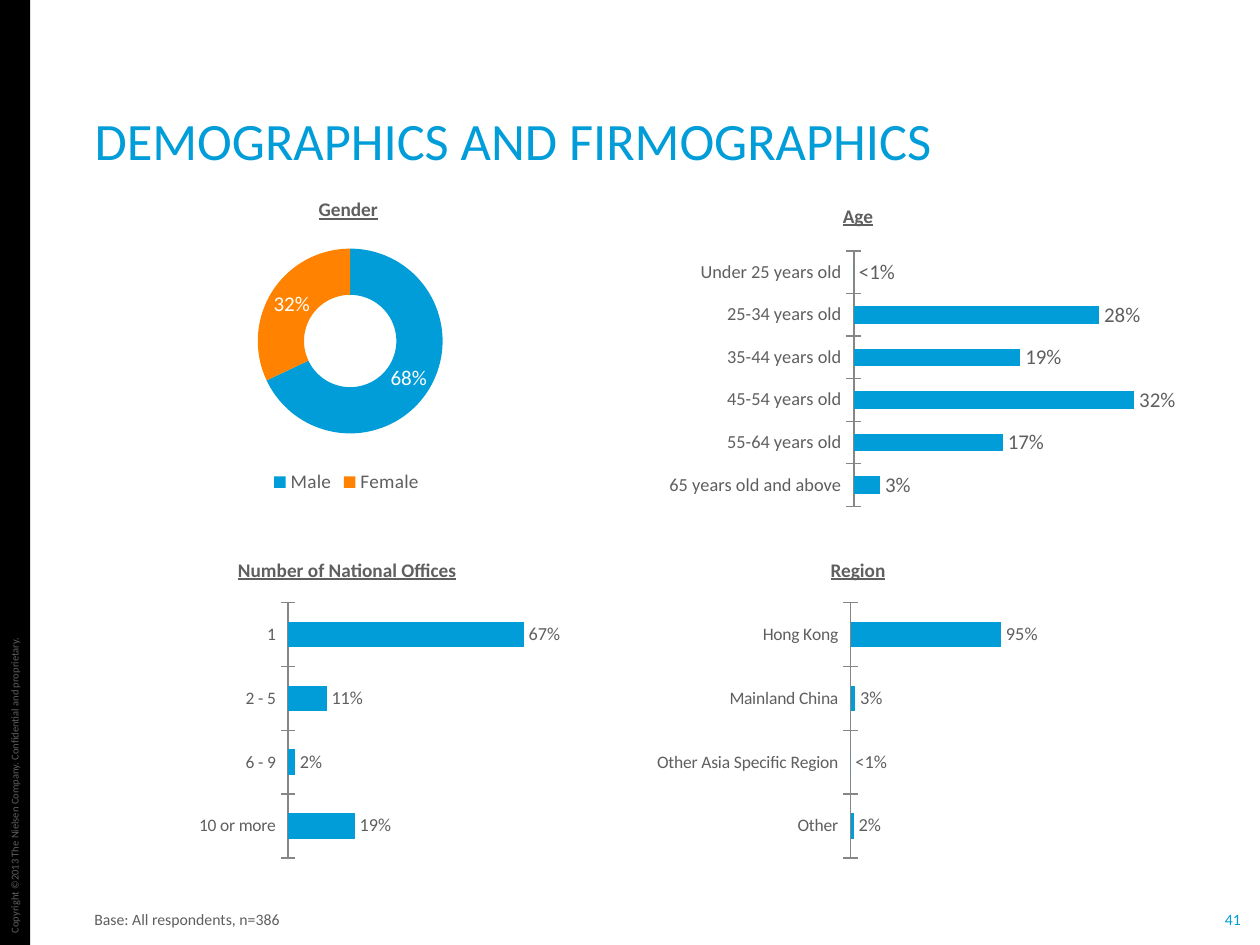
from lxml import etree
from pptx import Presentation
from pptx import util as u
from pptx.chart.data import CategoryChartData
from pptx.dml.color import RGBColor
from pptx.enum import chart as charts, shapes, text
from pptx.oxml.ns import qn

BLUE = RGBColor(0x00, 0x9D, 0xD9)
ORANGE = RGBColor(0xFF, 0x83, 0x00)
GRAY = RGBColor(0x5F, 0x5F, 0x5F)
AXIS = RGBColor(0x86, 0x86, 0x86)
BLACK = RGBColor(0, 0, 0)
WHITE = RGBColor(0xFF, 0xFF, 0xFF)
FONT = "Calibri"


class SlideBuilder:
    def __init__(self, slide):
        self.slide = slide

    def font(self, font, size, color=GRAY, bold=False, underline=False):
        font.name = FONT
        font.size = u.Pt(size)
        font.color.rgb = color
        font.bold = bold
        font.underline = underline

    def place(self, shape, box):
        shape.left, shape.top, shape.width, shape.height = map(u.Inches, box)

    def fill_text(self, frame, words, size, color, align, anchor, margins, wrap, **style):
        frame.word_wrap = wrap
        frame.auto_size = text.MSO_AUTO_SIZE.NONE
        frame.vertical_anchor = anchor
        frame.margin_left = frame.margin_right = u.Inches(margins[0])
        frame.margin_top = frame.margin_bottom = u.Inches(margins[1])
        paragraph = frame.paragraphs[0]
        paragraph.alignment = align
        run = paragraph.add_run()
        run.text = words
        self.font(run.font, size, color, **style)

    def title(self, box, words):
        title = self.slide.shapes.title
        self.place(title, box)
        self.fill_text(title.text_frame, words, 30, BLUE, text.PP_ALIGN.LEFT,
                       text.MSO_ANCHOR.BOTTOM, (0.1, 0), True)

    def text(self, box, words, size, color=GRAY, align=text.PP_ALIGN.LEFT,
             anchor=text.MSO_ANCHOR.TOP, margins=(0.1, 0.05), wrap=False,
             rotation=0, **style):
        shape = self.slide.shapes.add_textbox(*map(u.Inches, box))
        shape.rotation = rotation
        self.fill_text(shape.text_frame, words, size, color, align, anchor,
                       margins, wrap, **style)

    def heading(self, box, words, **options):
        self.text(box, words, 11, bold=True, underline=True, **options)

    def band(self, box, color):
        shape = self.slide.shapes.add_shape(
            shapes.MSO_SHAPE.RECTANGLE, *map(u.Inches, box))
        shape.shadow.inherit = False
        shape.fill.solid()
        shape.fill.fore_color.rgb = color
        shape.line.fill.background()

    def chart(self, kind, box, categories, values, plot_box, number_format):
        data = CategoryChartData(number_format=number_format)
        data.categories = categories
        data.add_series("Series 1", values)
        chart = self.slide.shapes.add_chart(kind, *map(u.Inches, box), data).chart
        chart.has_title = False
        chart.has_legend = False
        self.font(chart.font, 18)
        self.plot_layout(chart, plot_box)
        return chart

    def plot_layout(self, chart, plot_box):
        area = chart.plots[0]._element.getparent()
        for old in area.findall(qn("c:layout")):
            area.remove(old)
        layout = etree.Element(qn("c:layout"))
        manual = etree.SubElement(layout, qn("c:manualLayout"))
        settings = [("layoutTarget", "inner"), ("xMode", "edge"), ("yMode", "edge")]
        for name, value in settings + list(zip("xywh", plot_box)):
            etree.SubElement(manual, qn(f"c:{name}")).set("val", str(value))
        area.insert(0, layout)

    def bars(self, box, categories, values, plot_box, maximum, axis_size,
             label_size, small=None, gap=150, number_format="0%"):
        chart = self.chart(charts.XL_CHART_TYPE.BAR_CLUSTERED, box, categories,
                           values, plot_box, number_format)
        plot = chart.plots[0]
        plot.gap_width = gap
        plot.vary_by_categories = False
        series = plot.series[0]
        series.format.fill.solid()
        series.format.fill.fore_color.rgb = BLUE
        labels = series.data_labels
        labels.show_value = True
        labels.number_format = number_format
        labels.number_format_is_linked = False
        labels.position = charts.XL_LABEL_POSITION.OUTSIDE_END
        self.font(labels.font, label_size)
        if small is not None:
            label = series.points[small].data_label
            run = label.text_frame.paragraphs[0].add_run()
            run.text = "<1%"
            self.font(run.font, label_size)
            label.position = charts.XL_LABEL_POSITION.OUTSIDE_END
        category_axis = chart.category_axis
        category_axis.reverse_order = True
        category_axis.major_tick_mark = charts.XL_TICK_MARK.CROSS
        category_axis.format.line.color.rgb = AXIS
        self.font(category_axis.tick_labels.font, axis_size)
        value_axis = chart.value_axis
        value_axis.minimum_scale = 0
        value_axis.maximum_scale = maximum
        value_axis.has_major_gridlines = False
        value_axis.visible = False

    def doughnut(self, box, categories, values, plot_box, colors):
        chart = self.chart(charts.XL_CHART_TYPE.DOUGHNUT, box, categories,
                           values, plot_box, "General")
        plot = chart.plots[0]
        plot._element.find(qn("c:holeSize")).set("val", "58")
        series = plot.series[0]
        for index, color in enumerate(colors):
            fill = series.points[index].format.fill
            fill.solid()
            fill.fore_color.rgb = color
        labels = series.data_labels
        labels.show_value = False
        labels.show_percentage = True
        labels.number_format = "0%"
        labels.number_format_is_linked = False
        self.font(labels.font, 12, WHITE)
        chart.has_legend = True
        chart.legend.position = charts.XL_LEGEND_POSITION.BOTTOM
        chart.legend.include_in_layout = False
        self.font(chart.legend.font, 11)


def main():
    presentation = Presentation()
    presentation.slide_width = u.Inches(10)
    presentation.slide_height = u.Inches(7.5)
    builder = SlideBuilder(presentation.slides.add_slide(presentation.slide_layouts[5]))
    center, middle = text.PP_ALIGN.CENTER, text.MSO_ANCHOR.MIDDLE

    builder.band((0, 0, 0.24, 7.5), BLACK)
    builder.text((-1.18, 6.11, 2.59, 0.2),
                 "Copyright ©2013 The Nielsen Company. Confidential and proprietary.",
                 6, rotation=270)
    builder.text((9.71, 7.22, 0.15, 0.15), "41", 9, BLUE, center, middle, (0, 0))
    builder.title((0.65, 0.74, 8.93, 0.62), "DEMOGRAPHICS AND FIRMOGRAPHICS")
    builder.text((0.65, 6.97, 8.93, 0.4), "Base: All respondents, n=386", 9,
                 anchor=text.MSO_ANCHOR.BOTTOM, margins=(0.1, 0), wrap=True)

    builder.bars((5.08, 1.83, 4.25, 2.33),
                 ["Under 25 years old", "25-34 years old", "35-44 years old",
                  "45-54 years old", "55-64 years old", "65 years old and above"],
                 [0, 0.28, 0.19, 0.32, 0.17, 0.03], (0.4, 0.07, 0.59, 0.87),
                 0.36, 10.5, 12, small=0, gap=140, number_format="#,##0%")
    builder.heading((6.59, 1.57, 0.45, 0.29), "Age")

    builder.bars((1.58, 4.62, 3, 2.33), ["1", "2 - 5", "6 - 9", "10 or more"],
                 [0.67, 0.11, 0.02, 0.19], (0.23, 0.07, 0.75, 0.87),
                 0.8, 10, 10.5, number_format="#,##0%")
    builder.heading((1.79, 4.38, 1.96, 0.29), "Number of National Offices", wrap=True)

    builder.doughnut((1.67, 1.77, 2.16, 2.19), ["Male", "Female"], [68, 32],
                     (0.155, 0.093, 0.718, 0.67), [BLUE, ORANGE])
    builder.heading((2.43, 1.52, 0.67, 0.29), "Gender")

    builder.bars((5.08, 4.62, 3.25, 2.33),
                 ["Hong Kong", "Mainland China", "Other Asia Specific Region", "Other"],
                 [0.95, 0.03, 0, 0.02], (0.514, 0.07, 0.387, 0.87),
                 1, 10, 10.5, small=2)
    builder.heading((5.83, 4.38, 1.96, 0.29), "Region", align=center, wrap=True)

    presentation.save("out.pptx")


if __name__ == "__main__":
    main()
